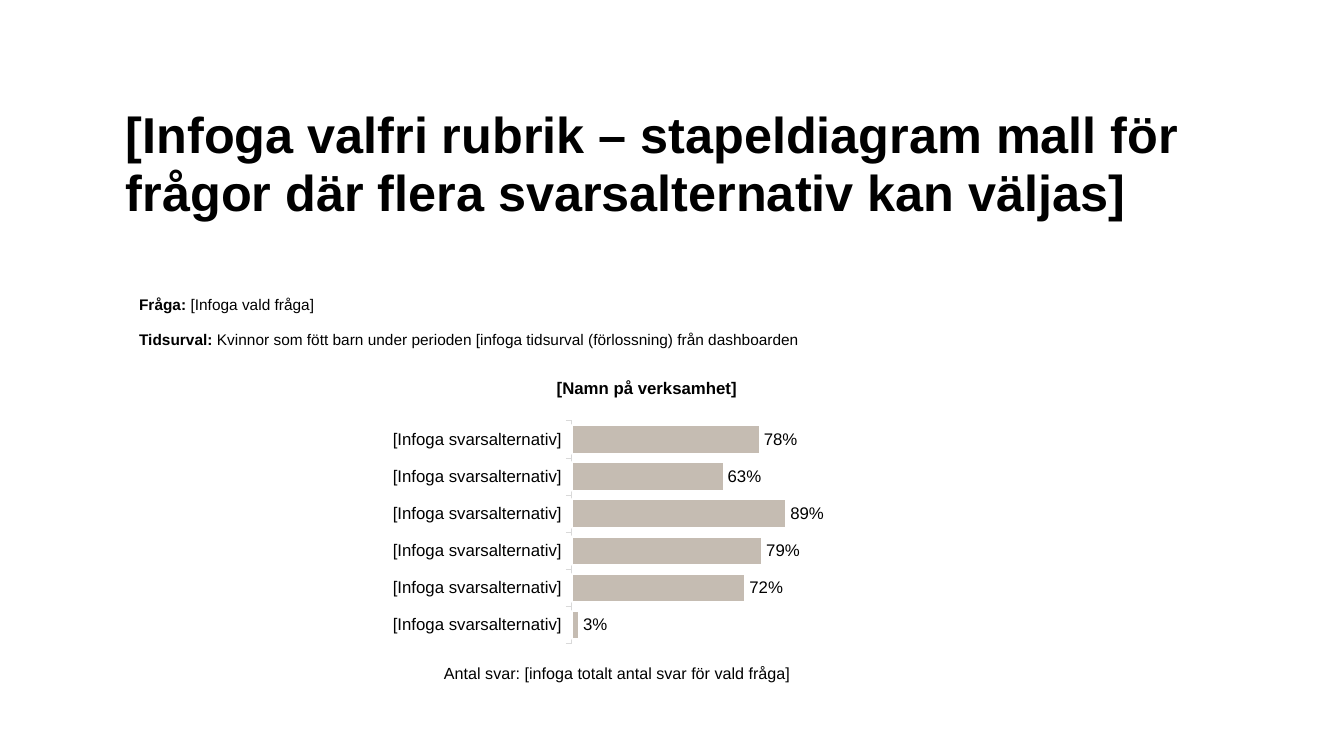
import pptx
import pptx.chart.data
import pptx.dml.color
import pptx.enum.chart
import pptx.enum.text
import pptx.oxml
import pptx.oxml.ns
import pptx.util

BLACK = pptx.dml.color.RGBColor(0x00, 0x00, 0x00)
WHITE = pptx.dml.color.RGBColor(0xFF, 0xFF, 0xFF)
BEIGE = pptx.dml.color.RGBColor(0xC5, 0xBC, 0xB2)
GRAY = pptx.dml.color.RGBColor(0xD9, 0xD9, 0xD9)
FONT = "Arial"
PX = 9144

HEADING = "[Infoga valfri rubrik – stapeldiagram mall för frågor där flera svarsalternativ kan väljas]"
DETAILS = [
    ("Fråga: ", "[Infoga vald fråga]"),
    ("Tidsurval: ", "Kvinnor som fött barn under perioden [infoga tidsurval (förlossning) från dashboarden"),
]
ANSWER_COUNT = "Antal svar: [infoga totalt antal svar för vald fråga]"
UNIT_NAME = "[Namn på verksamhet]"
ANSWER = "[Infoga svarsalternativ]"
SHARES = [0.03, 0.72, 0.79, 0.89, 0.63, 0.78]

HEADING_BOX = (115, 97, 1095, 134)
DETAILS_BOX = (125, 288, 970, 78)
COUNT_BOX = (231, 653, 762, 29)
CHART_BOX = (310, 366, 598, 287)
PLOT_LAYOUT = {"x": 0.43, "y": 0.18, "w": 0.4, "h": 0.77}
TITLE_LAYOUT = {"x": 0.4, "y": 0.02}


def emu(box):
    return [v * PX for v in box]


def set_font(font, size, bold=None):
    font.name = FONT
    font.size = pptx.util.Pt(size)
    font.color.rgb = BLACK
    font.bold = bold


def add_text(slide, box):
    tf = slide.shapes.add_textbox(*emu(box)).text_frame
    tf.word_wrap = True
    return tf


def make_layout(sizes, inner=False):
    target = '<c:layoutTarget val="inner"/>' if inner else ""
    modes = "".join(f'<c:{k}Mode val="edge"/>' for k in sizes if k in "xy")
    values = "".join(f'<c:{k} val="{v}"/>' for k, v in sizes.items())
    return pptx.oxml.parse_xml(
        f'<c:layout {pptx.oxml.ns.nsdecls("c")}><c:manualLayout>'
        f"{target}{modes}{values}</c:manualLayout></c:layout>")


def place(parent, index, layout):
    for old in parent.findall(pptx.oxml.ns.qn("c:layout")):
        parent.remove(old)
    parent.insert(index, layout)


def add_share_chart(slide):
    data = pptx.chart.data.CategoryChartData(number_format="0%")
    data.categories = [ANSWER] * len(SHARES)
    data.add_series(UNIT_NAME, SHARES)
    kind = pptx.enum.chart.XL_CHART_TYPE.BAR_CLUSTERED
    chart = slide.shapes.add_chart(kind, *emu(CHART_BOX), data).chart
    set_font(chart.font, 10)
    chart.has_legend = False

    chart.has_title = True
    p = chart.chart_title.text_frame.paragraphs[0]
    p.text = UNIT_NAME
    set_font(p.font, 12, True)
    chart.chart_title.include_in_layout = False
    title = chart.chart_title._element
    place(title, 1, make_layout(TITLE_LAYOUT))
    place(chart._chartSpace.chart.plotArea, 0, make_layout(PLOT_LAYOUT, True))

    axis = chart.category_axis
    axis.major_tick_mark = pptx.enum.chart.XL_TICK_MARK.OUTSIDE
    axis.format.line.color.rgb = GRAY
    axis.format.line.width = pptx.util.Pt(0.75)
    set_font(axis.tick_labels.font, 12)
    axis = chart.value_axis
    axis.minimum_scale, axis.maximum_scale = 0, 1
    axis.has_major_gridlines = False
    axis.visible = False

    plot = chart.plots[0]
    plot.gap_width = 30
    plot.vary_by_categories = False
    series = plot.series[0]
    series.format.fill.solid()
    series.format.fill.fore_color.rgb = BEIGE
    series.format.line.color.rgb = WHITE
    series.format.line.width = pptx.util.Pt(1.5)
    labels = series.data_labels
    labels.show_value = True
    labels.number_format = "0%"
    labels.number_format_is_linked = False
    labels.position = pptx.enum.chart.XL_LABEL_POSITION.OUTSIDE_END
    set_font(labels.font, 12)


def main():
    prs = pptx.Presentation()
    prs.slide_width, prs.slide_height = 1333 * PX, 750 * PX
    slide = prs.slides.add_slide(prs.slide_layouts[6])

    tf = add_text(slide, HEADING_BOX)
    tf.vertical_anchor = pptx.enum.text.MSO_ANCHOR.MIDDLE
    p = tf.paragraphs[0]
    p.text = HEADING
    p.line_spacing = 0.95
    set_font(p.font, 36, True)

    p = add_text(slide, COUNT_BOX).paragraphs[0]
    p.text = ANSWER_COUNT
    p.alignment = pptx.enum.text.PP_ALIGN.CENTER
    set_font(p.font, 11.5)

    add_share_chart(slide)

    tf = add_text(slide, DETAILS_BOX)
    tf.margin_left = 13 * PX
    for i, (label, value) in enumerate(DETAILS):
        p = tf.add_paragraph() if i else tf.paragraphs[0]
        p.space_after = pptx.util.Pt(12)
        set_font(p.font, 11)
        for text, bold in ((label, True), (value, False)):
            r = p.add_run()
            r.text = text
            r.font.bold = bold

    prs.save("out.pptx")


if __name__ == "__main__":
    main()
